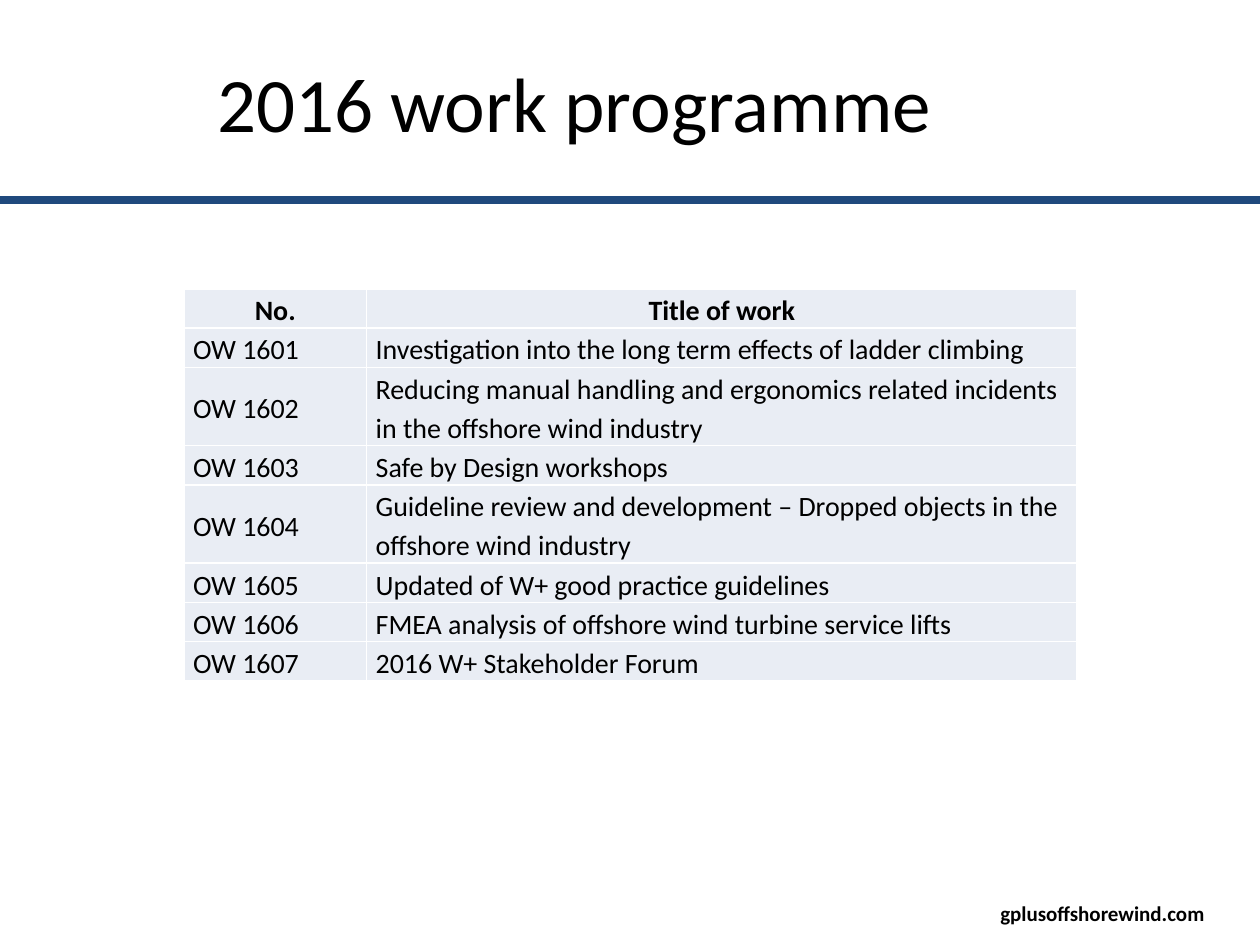
import pptx
import pptx.dml.color
import pptx.enum.shapes
import pptx.enum.text
import pptx.oxml
import pptx.oxml.ns
import pptx.util

Pt = pptx.util.Pt
ALIGN = pptx.enum.text.PP_ALIGN
MIDDLE = pptx.enum.text.MSO_ANCHOR.MIDDLE

HEADINGS = ("No.", "Title of work")
PROJECTS = (
    ("OW 1601", "Investigation into the long term effects of ladder climbing", 1),
    ("OW 1602", "Reducing manual handling and ergonomics related incidents "
                "in the offshore wind industry", 2),
    ("OW 1603", "Safe by Design workshops", 1),
    ("OW 1604", "Guideline review and development – Dropped objects in the "
                "offshore wind industry", 2),
    ("OW 1605", "Updated of W+ good practice guidelines", 1),
    ("OW 1606", "FMEA analysis of offshore wind turbine service lifts", 1),
    ("OW 1607", "2016 W+ Stakeholder Forum", 1),
)
LINE_HEIGHT = 22.4


def color(value):
    return pptx.dml.color.RGBColor.from_string(value)


def add_run(p, text, size, bold=False):
    r = p.add_run()
    r.text = text
    r.font.name = "Calibri"
    r.font.size = Pt(size)
    r.font.bold = bold
    r.font.color.rgb = color("000000")


def add_title(s, left, top, width, height):
    sp = s.shapes.title
    sp.left, sp.top, sp.width, sp.height = map(Pt, (left, top, width, height))
    tf = sp.text_frame
    tf.vertical_anchor = MIDDLE
    p = tf.paragraphs[0]
    p.alignment = ALIGN.CENTER
    add_run(p, "2016 work programme", 44)


def add_rule(s, left, top, width):
    line = s.shapes.add_connector(
        pptx.enum.shapes.MSO_CONNECTOR.STRAIGHT,
        Pt(left), Pt(top), Pt(left + width), Pt(top))
    line.line.color.rgb = color("1F497D")
    line.line.width = Pt(5)
    line._element.spPr.append(pptx.oxml.parse_xml(
        "<a:effectLst %s/>" % pptx.oxml.ns.nsdecls("a")))


def add_footer(s, left, top, width, height):
    sp = s.shapes.add_textbox(Pt(left), Pt(top), Pt(width), Pt(height))
    tf = sp.text_frame
    tf.word_wrap = False
    add_run(tf.paragraphs[0], "gplusoffshorewind.com", 12, True)


def set_borders(cell, value):
    tcPr = cell._tc.get_or_add_tcPr()
    for i, side in enumerate(("lnL", "lnR", "lnT", "lnB")):
        tcPr.insert(i, pptx.oxml.parse_xml(
            '<a:%s %s w="12700"><a:solidFill><a:srgbClr val="%s"/>'
            "</a:solidFill></a:%s>"
            % (side, pptx.oxml.ns.nsdecls("a"), value, side)))


def fill_cell(cell, text, align, bold):
    cell.margin_left = cell.margin_right = Pt(5.2)
    cell.margin_top = cell.margin_bottom = Pt(0)
    cell.vertical_anchor = MIDDLE
    cell.fill.solid()
    cell.fill.fore_color.rgb = color("E9EDF4")
    set_borders(cell, "FFFFFF")
    p = cell.text_frame.paragraphs[0]
    p.alignment = align
    p.line_spacing = 1.15
    p.space_after = Pt(6)
    add_run(p, text, 16, bold)


def add_programme_table(s, left, top, width):
    rows = ((*HEADINGS, 1), *PROJECTS)
    height = LINE_HEIGHT * sum(lines for *_, lines in rows)
    table = s.shapes.add_table(
        len(rows), 2, Pt(left), Pt(top), Pt(width), Pt(height)).table
    number_width = 104.4
    table.columns[0].width = Pt(number_width)
    table.columns[1].width = Pt(width - number_width)
    for i, (number, title, lines) in enumerate(rows):
        table.rows[i].height = Pt(LINE_HEIGHT * lines)
        header = i == 0
        aligns = (ALIGN.CENTER, ALIGN.CENTER) if header else (ALIGN.JUSTIFY, ALIGN.LEFT)
        for j, text in enumerate((number, title)):
            fill_cell(table.cell(i, j), text, aligns[j], header)


def main():
    prs = pptx.Presentation()
    prs.slide_width, prs.slide_height = Pt(720), Pt(540)
    s = prs.slides.add_slide(prs.slide_layouts[5])
    add_rule(s, 0, 114.3, 720)
    add_footer(s, 564.5, 511.2, 133.2, 21.8)
    add_title(s, 36, 21.6, 584.6, 72.7)
    add_programme_table(s, 105.1, 165.1, 510.4)
    prs.save("out.pptx")


if __name__ == "__main__":
    main()
